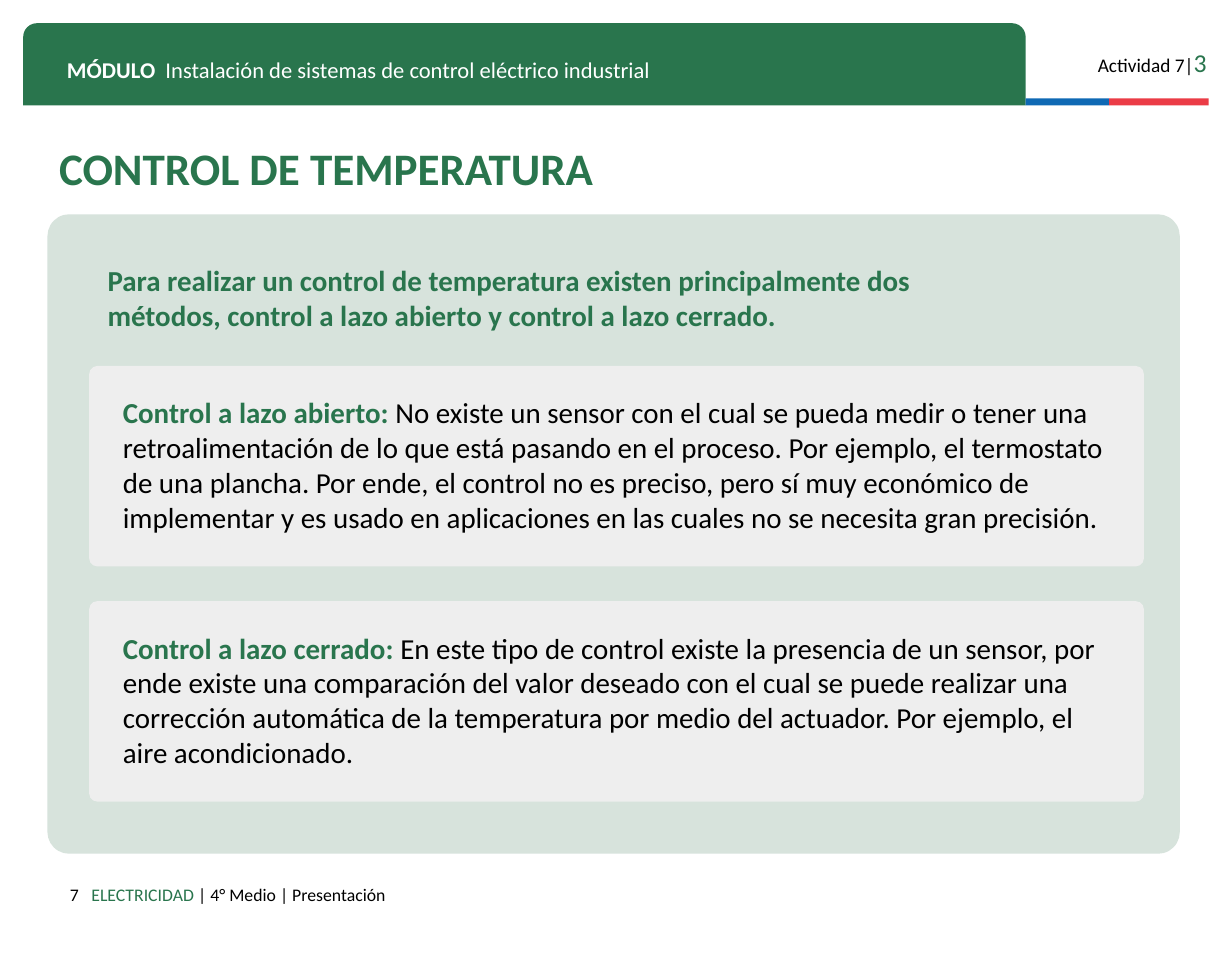
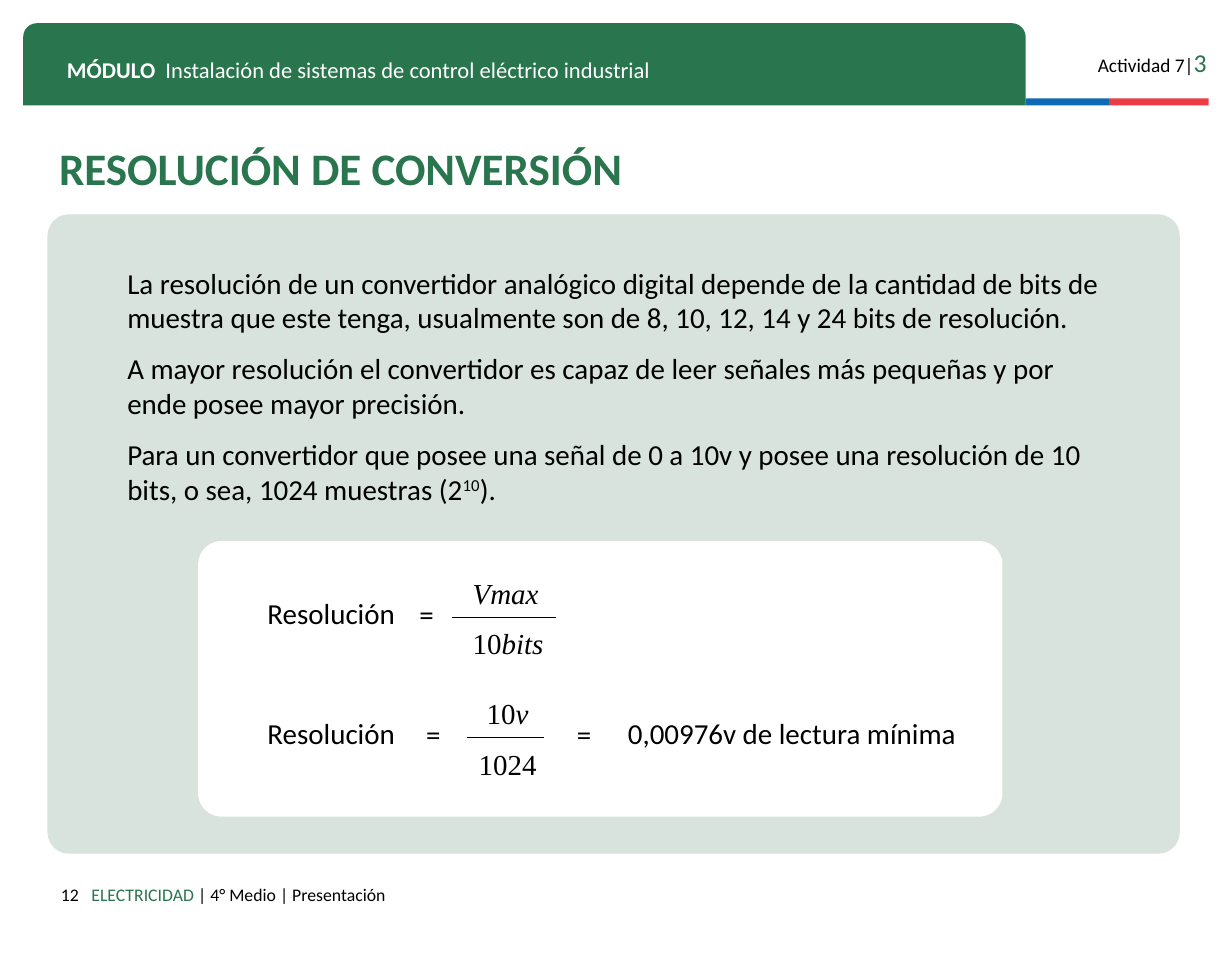
from pptx import Presentation, util as u
from pptx.dml.color import RGBColor
from pptx.enum import shapes, text
from pptx.oxml.ns import qn
from lxml import etree

CELL = u.Inches(0.1)
COLS, ROWS = 106.3, 82.7
LEFT, MAIN = 4.1, 97.7
HUE = {"green": "29754D", "blue": "0F69B4", "red": "EB3C46", "mint": "D7E3DC",
       "gray": "EEEEEE", "white": "FFFFFF", "black": "000000"}
SIDE = {"l": text.PP_ALIGN.LEFT, "c": text.PP_ALIGN.CENTER, "r": text.PP_ALIGN.RIGHT}
KIND = shapes.MSO_SHAPE
BOLD = {"bold": True, "hue": "green"}
SLANT = {"italic": True}
TIGHT = (1, 0.5, 1, 0.5)
EVEN = (1, 1, 1, 1)


def cells(*nums):
    return [round(n * CELL) for n in nums]


def color(name):
    return RGBColor.from_string(HUE[name])


def style(run, size=18, face="Calibri", hue="black", bold=False, italic=False, base=0):
    font = run.font
    font.size, font.name = u.Pt(size), face
    font.bold, font.italic = bold, italic
    font.color.rgb = color(hue)
    if base:
        run._r.get_or_add_rPr().set("baseline", str(base * 1000))


def set_tab(para, col):
    tabs = etree.SubElement(para._p.get_or_add_pPr(), qn("a:tabLst"))
    etree.SubElement(tabs, qn("a:tab"), pos=str(cells(col)[0]), algn="l")


def write(shape, *paras, side="l", gap=0, after=0, lead=None, pad=TIGHT,
          anchor=text.MSO_ANCHOR.TOP, tab=None, **look):
    frame = shape.text_frame
    frame.word_wrap = True
    frame.auto_size = text.MSO_AUTO_SIZE.NONE
    frame.vertical_anchor = anchor
    (frame.margin_left, frame.margin_top,
     frame.margin_right, frame.margin_bottom) = cells(*pad)
    for i, runs in enumerate(paras):
        para = frame.add_paragraph() if i else frame.paragraphs[0]
        if tab:
            set_tab(para, tab)
        para.alignment = SIDE[side]
        para.space_before = u.Pt(gap if i else 0)
        para.space_after = u.Pt(after)
        if lead:
            para.line_spacing = lead
        for part in [runs] if isinstance(runs, str) else runs:
            words, extra = (part, {}) if isinstance(part, str) else part
            run = para.add_run()
            run.text = words
            style(run, **{**look, **extra})


def label(slide, box, *paras, **form):
    write(slide.shapes.add_textbox(*cells(*box)), *paras, **form)


def panel(slide, box, hue, kind=KIND.RECTANGLE, *bends):
    shape = slide.shapes.add_shape(kind, *cells(*box))
    shape.shadow.inherit = False
    shape.fill.solid()
    shape.fill.fore_color.rgb = color(hue)
    shape.line.fill.background()
    for i, bend in enumerate(bends):
        shape.adjustments[i] = bend
    return shape


def rule(slide, left, right, top):
    line = slide.shapes.add_connector(
        shapes.MSO_CONNECTOR.STRAIGHT, *cells(left, top, right, top))
    line.line.color.rgb = color("black")
    line.line.width = u.Pt(0.75)
    etree.SubElement(line._element.spPr, qn("a:effectLst"))


def frame(deck, name, page):
    slide = deck.slides.add_slide(deck.slide_layouts[5])
    panel(slide, (2, 2, 86.5, 7.1), "green", KIND.ROUND_2_SAME_RECTANGLE, 0.167, 0)
    panel(slide, (88.5, 8.5, 7.2, 0.6), "blue")
    panel(slide, (95.7, 8.5, 8.6, 0.6), "red")
    label(slide, (92.3, 3, 12.8, 3.8),
          ["Actividad 7|", ("3", {"size": 16, "hue": "green"})],
          side="r", size=12, pad=EVEN)
    label(slide, (4.8, 3.8, 81.4, 3.5),
          [("MÓDULO", {"bold": True}),
           "\tInstalación de sistemas de control eléctrico industrial"],
          size=14, hue="white", pad=EVEN, tab=8.5)
    label(slide, (2, 75.3, 5.8, 2.9), page, side="r", size=11, pad=EVEN)
    label(slide, (6.9, 75.3, 71.3, 3.8),
          [("ELECTRICIDAD ", {"hue": "green"}), "| 4° Medio | Presentación"],
          size=11, pad=EVEN)
    title = slide.shapes.title
    title.left, title.top, title.width, title.height = cells(LEFT, 12.9, 87.2, 3.9)
    write(title, name, size=28, lead=0.8, pad=EVEN,
          anchor=text.MSO_ANCHOR.MIDDLE, **BOLD)
    panel(slide, (LEFT, 18.5, MAIN, 55.2), "mint", KIND.ROUNDED_RECTANGLE, 0.034)
    return slide


def card(slide, row, head, body):
    box = (7.7, 31.6 + 20.3 * row, 91, 17.3)
    shape = panel(slide, box, "gray", KIND.ROUNDED_RECTANGLE, 0.04)
    write(shape, [(head, BOLD), body], pad=(2.7, 2.3, 2.1, 1))


def ratio(slide, top, over, under, stack, bar, side):
    label(slide, (22.1, top, 13.6, 5.4), "Resolución")
    label(slide, (35.2, top + 0.1, 4.4, 5.4), "=", side=side)
    left, width = stack
    label(slide, (left, top - 1.75, width, 9.9), over, under,
          side=side, gap=10, face="Times New Roman")
    rule(slide, *bar, top + 2.4)


def control(deck):
    slide = frame(deck, "CONTROL DE TEMPERATURA", "7")
    label(slide, (8.3, 22.2, 79.3, 8.8),
          "Para realizar un control de temperatura existen principalmente dos "
          "métodos, control a lazo abierto y control a lazo cerrado.", **BOLD)
    card(slide, 0, "Control a lazo abierto: ",
         "No existe un sensor con el cual se pueda medir o tener una "
         "retroalimentación de lo que está pasando en el proceso. Por ejemplo, "
         "el termostato de una plancha. Por ende, el control no es preciso, pero "
         "sí muy económico de implementar y es usado en aplicaciones en las "
         "cuales no se necesita gran precisión.")
    card(slide, 1, "Control a lazo cerrado: ",
         "En este tipo de control existe la presencia de un sensor, por ende "
         "existe una comparación del valor deseado con el cual se puede realizar "
         "una corrección automática de la temperatura por medio del actuador. "
         "Por ejemplo, el aire acondicionado.")


def sampling(deck):
    slide = frame(deck, "RESOLUCIÓN DE CONVERSIÓN", "12")
    label(slide, (10, 22.4, 87.6, 23.4),
          "La resolución de un convertidor analógico digital depende de la "
          "cantidad de bits de muestra que este tenga, usualmente son de 8, 10, "
          "12, 14 y 24 bits de resolución.",
          "A mayor resolución el convertidor es capaz de leer señales más "
          "pequeñas y por ende posee mayor precisión.",
          ["Para un convertidor que posee una señal de 0 a 10v y posee una "
           "resolución de 10 bits, o sea, 1024 muestras (2",
           ("10", {"base": 30}), ")."], gap=10)
    panel(slide, (17.1, 46.7, 69.4, 23.8), "white", KIND.ROUNDED_RECTANGLE, 0.086)
    ratio(slide, 50.9, [("Vmax", SLANT)], ["10", ("bits", SLANT)],
          (39.8, 9), (39, 48), "l")
    ratio(slide, 61.3, ["10", ("v", SLANT)], "1024", (39.8, 8), (40.3, 46.9), "c")
    label(slide, (48.2, 61.4, 4.4, 5.4), "=", side="c")
    label(slide, (53.2, 61.3, 32.3, 5.4), "0,00976v de lectura mínima")


def main():
    deck = Presentation()
    deck.slide_width, deck.slide_height = cells(COLS, ROWS)
    control(deck)
    sampling(deck)
    deck.save("out.pptx")


if __name__ == "__main__":
    main()
